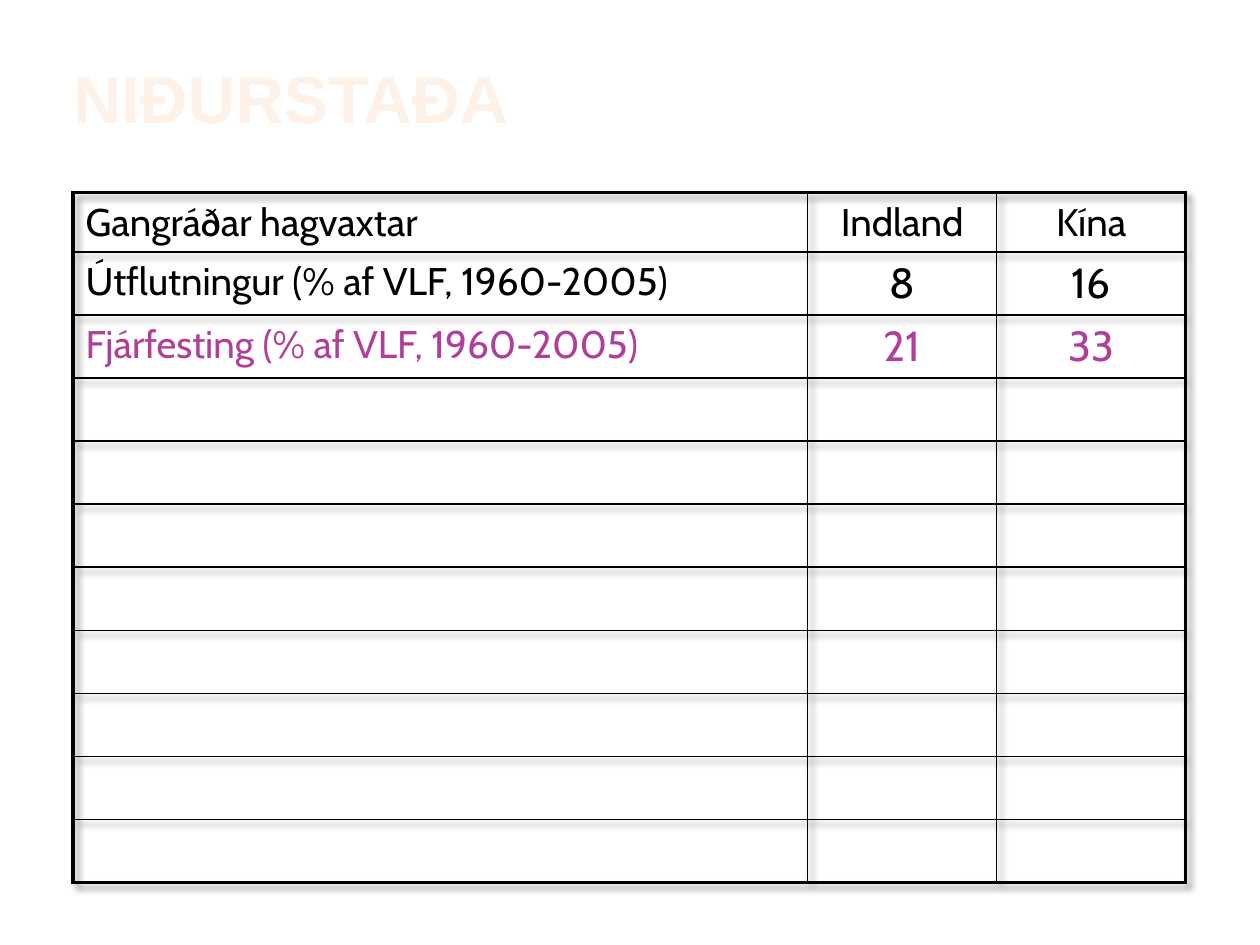
from dataclasses import dataclass

from lxml.etree import SubElement
from pptx import Presentation
from pptx.dml.color import RGBColor
from pptx.enum.text import PP_ALIGN
from pptx.oxml import parse_xml
from pptx.oxml.ns import nsdecls, qn
from pptx.slide import Slide
from pptx.table import Table, _Cell
from pptx.util import Inches, Pt

BLACK = RGBColor(0x00, 0x00, 0x00)
MAGENTA = RGBColor(0xB1, 0x3F, 0x9A)
CREAM = RGBColor(0xFE, 0xF2, 0xE8)
OUTER_LINE = Pt(2.25)
INNER_LINE = Pt(1)
ROW_COUNT = 11
COLUMN_WIDTHS = (5.83, 1.5, 1.5)
HEADER_HEIGHT = 0.47
ROW_HEIGHT = 0.5


@dataclass(frozen=True)
class GrowthDriver:
    label: str = ""
    india: str = ""
    china: str = ""
    color: RGBColor = BLACK
    label_size: int = 22
    value_size: int = 24


DRIVERS = (
    GrowthDriver("Gangráðar hagvaxtar", "Indland", "Kína", value_size=22),
    GrowthDriver("Útflutningur (% af VLF, 1960-2005)", "8", "16"),
    GrowthDriver("Fjárfesting (% af VLF, 1960-2005)", "21", "33", MAGENTA),
)


def add_heading(slide: Slide, text: str) -> None:
    heading = slide.shapes.add_textbox(Inches(0.58), Inches(0.45), Inches(8.83), Inches(0.65))
    frame = heading.text_frame
    frame.word_wrap = True
    frame.margin_left = frame.margin_right = frame.margin_top = frame.margin_bottom = 0
    frame.text = text
    font = frame.paragraphs[0].font
    font.name, font.size, font.bold = "Arial", Pt(38), True
    font.color.rgb = CREAM


def set_borders(cell: _Cell, row: int, column: int) -> None:
    outer_sides = {
        "a:lnL": column == 0,
        "a:lnR": column == len(COLUMN_WIDTHS) - 1,
        "a:lnT": row == 0,
        "a:lnB": row == ROW_COUNT - 1,
    }
    properties = cell._tc.get_or_add_tcPr()
    for side, is_outer in outer_sides.items():
        border = SubElement(properties, qn(side), w=str(OUTER_LINE if is_outer else INNER_LINE))
        fill = SubElement(border, qn("a:solidFill"))
        SubElement(fill, qn("a:srgbClr"), val=str(BLACK))


def fill_row(table: Table, row: int, driver: GrowthDriver) -> None:
    for column, text in enumerate((driver.label, driver.india, driver.china)):
        cell = table.cell(row, column)
        set_borders(cell, row, column)
        cell.fill.background()
        cell.text = text
        paragraph = cell.text_frame.paragraphs[0]
        paragraph.alignment = PP_ALIGN.CENTER if column else PP_ALIGN.LEFT
        size = driver.value_size if column else driver.label_size
        paragraph.font.name, paragraph.font.size = "Cabin", Pt(size)
        paragraph.font.color.rgb = driver.color


def add_shadow(table: Table) -> None:
    table._tbl.tblPr.insert(0, parse_xml(
        f'<a:effectLst {nsdecls("a")}>'
        '<a:outerShdw blurRad="50800" dist="50800" dir="2700000" algn="tl">'
        '<a:srgbClr val="000000"><a:alpha val="40000"/></a:srgbClr>'
        '</a:outerShdw></a:effectLst>'
    ))


def add_driver_table(slide: Slide) -> None:
    height = HEADER_HEIGHT + (ROW_COUNT - 1) * ROW_HEIGHT
    table = slide.shapes.add_table(
        ROW_COUNT, len(COLUMN_WIDTHS),
        Inches(0.58), Inches(1.53), Inches(sum(COLUMN_WIDTHS)), Inches(height),
    ).table
    table.first_row = table.horz_banding = False
    add_shadow(table)
    for column, width in zip(table.columns, COLUMN_WIDTHS):
        column.width = Inches(width)
    blank_rows = (GrowthDriver(label_size=24),) * (ROW_COUNT - len(DRIVERS))
    for index, driver in enumerate(DRIVERS + blank_rows):
        table.rows[index].height = Inches(ROW_HEIGHT if index else HEADER_HEIGHT)
        fill_row(table, index, driver)


def main() -> None:
    """Build the slide comparing growth drivers in India and China."""
    presentation = Presentation()
    presentation.slide_width, presentation.slide_height = Inches(10), Inches(7.5)
    slide = presentation.slides.add_slide(presentation.slide_layouts[6])
    add_heading(slide, "NIÐURSTAÐA")
    add_driver_table(slide)
    presentation.save("out.pptx")


if __name__ == "__main__":
    main()
